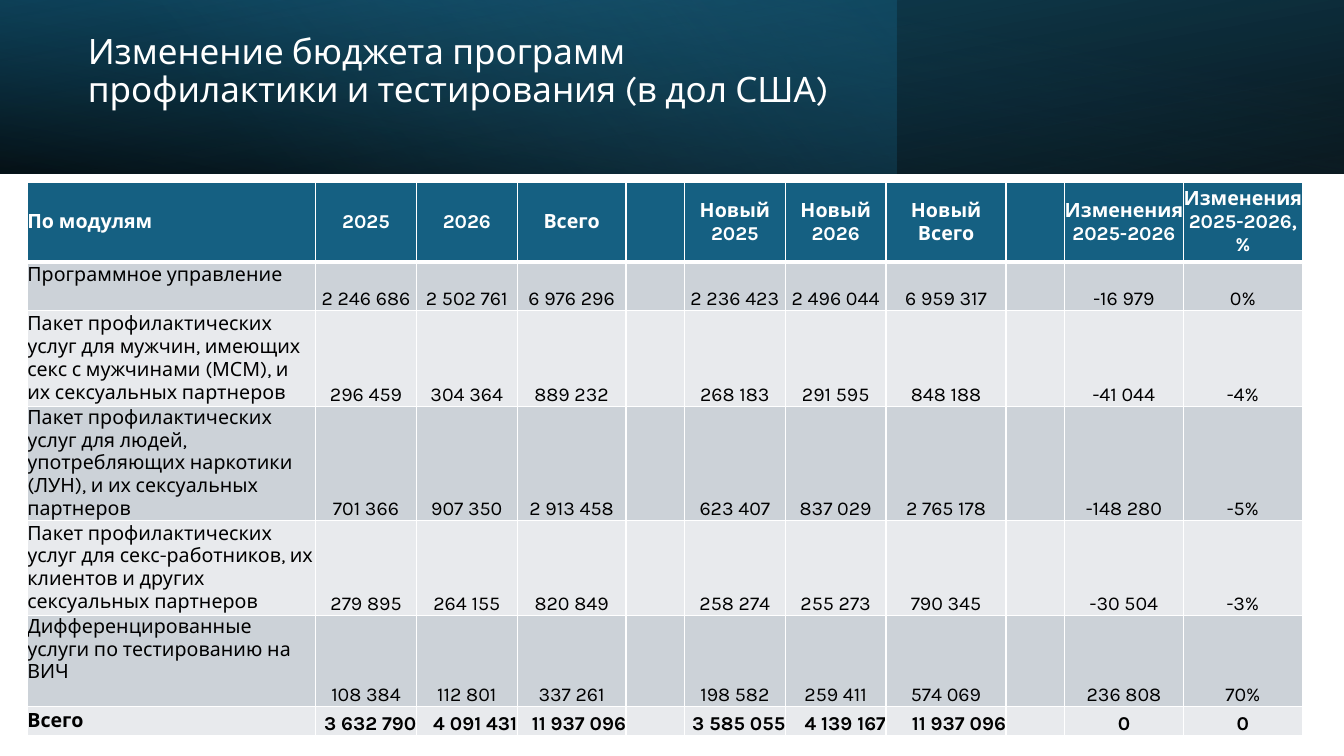
"""Build the slide on budget changes in prevention and testing programmes."""
from dataclasses import dataclass
from typing import NamedTuple

from lxml import etree
from pptx import Presentation
from pptx.dml.color import RGBColor
from pptx.enum.shapes import MSO_SHAPE
from pptx.enum.text import MSO_ANCHOR, MSO_AUTO_SIZE, PP_ALIGN
from pptx.oxml.ns import qn
from pptx.slide import Slide
from pptx.table import Table, _Cell
from pptx.text.text import _Paragraph
from pptx.util import Inches, Pt

RECT = MSO_SHAPE.RECTANGLE
MIDDLE, BOTTOM = MSO_ANCHOR.MIDDLE, MSO_ANCHOR.BOTTOM
LEFT, CENTER, RIGHT = PP_ALIGN.LEFT, PP_ALIGN.CENTER, PP_ALIGN.RIGHT
NO_FIT = MSO_AUTO_SIZE.NONE
WIDE, HIGH = Inches(13.33), Inches(7.5)


@dataclass(frozen=True)
class Theme:
    font: str = "Karla"
    title: int = 25
    body: int = 14
    white: str = "FFFFFF"
    black: str = "000000"
    blue: str = "156082"
    deep: str = "104862"
    sky: str = "46B1E1"
    dark: str = "CCD2D8"
    light: str = "E8EAED"


class Box(NamedTuple):
    """Left, top, width and height in percent of the slide."""
    x: float
    y: float
    w: float
    h: float


class Stop(NamedTuple):
    place: int
    color: str
    alpha: int


class Band(NamedTuple):
    width: float
    angle: int
    stops: tuple[Stop, ...]
    flip: bool = False
    turn: int = 0


class Row(NamedTuple):
    height: float
    name: str
    old: tuple[str, ...]
    new: tuple[str, ...]
    change: tuple[str, ...]
    foot: float = 0


THEME = Theme()
BAND_H = 22.93
TITLE = "Изменение бюджета программ профилактики и тестирования (в дол США)"
TITLE_BOX = Box(5.78, 3.6, 57.91, 16.93)
GRID_BOX = Box(2.03, 24.13, 94.89, 70.4)
YEAR, GAP, DIFF = 7.5, 4.35, 8.85
COLS = (21.46, YEAR, YEAR, 8.1, GAP, YEAR, YEAR, 8.93, GAP, DIFF, DIFF)

BANDS = (
    Band(100, 100, (Stop(0, THEME.black, 96), Stop(100, THEME.deep, 100)), True, 180),
    Band(66.69, 140, (Stop(0, THEME.blue, 41), Stop(74, THEME.sky, 0))),
    Band(100, 260, (Stop(0, THEME.black, 63), Stop(78, THEME.blue, 15)), True),
)

ROWS = (
    Row(10.53, "По модулям", ("2025", "2026", "Всего"),
        ("Новый 2025", "Новый 2026", "Новый\nВсего"),
        ("Изменения 2025-2026", "Изменения 2025-2026, %")),
    Row(6.4, "Программное управление", ("2 246 686", "2 502 761", "6 976 296"),
        ("2 236 423", "2 496 044", "6 959 317"), ("-16 979", "0%"), 3),
    Row(12.67, "Пакет профилактических услуг для мужчин, имеющих секс с мужчинами "
        "(МСМ), и их сексуальных партнеров", ("296 459", "304 364", "889 232"),
        ("268 183", "291 595", "848 188"), ("-41 044", "-4%")),
    Row(14.53, "Пакет профилактических услуг для людей, употребляющих наркотики "
        "(ЛУН), и их сексуальных партнеров", ("701 366", "907 350", "2 913 458"),
        ("623 407", "837 029", "2 765 178"), ("-148 280", "-5%")),
    Row(12.53, "Пакет профилактических услуг для секс-работников, их клиентов и "
        "других сексуальных партнеров", ("279 895", "264 155", "820 849"),
        ("258 274", "255 273", "790 345"), ("-30 504", "-3%")),
    Row(9.87, "Дифференцированные услуги по тестированию на ВИЧ",
        ("108 384", "112 801", "337 261"),
        ("198 582", "259 411", "574 069"), ("236 808", "70%"), 3),
    Row(3.87, "Всего", ("3 632 790", "4 091 431", "11 937 096"),
        ("3 585 055", "4 139 167", "11 937 096"), ("0", "0")),
)


def across(share: float) -> int:
    return round(WIDE * share / 100)


def down(share: float) -> int:
    return round(HIGH * share / 100)


def place(box: Box) -> tuple[int, int, int, int]:
    return across(box.x), down(box.y), across(box.w), down(box.h)


def add_run(para: _Paragraph, text: str, size: int, color: str, bold: bool = False) -> None:
    run = para.add_run()
    run.text = text
    run.font.name, run.font.size, run.font.bold = THEME.font, Pt(size), bold
    run.font.color.rgb = RGBColor.from_string(color)


def add_color(node: etree._Element, color: str, alpha: int = 100) -> None:
    tint = etree.SubElement(node, qn("a:srgbClr"), val=color)
    if alpha < 100:
        etree.SubElement(tint, qn("a:alpha"), val=str(alpha * 1000))


def draw_band(slide: Slide, band: Band) -> None:
    shape = slide.shapes.add_shape(RECT, *place(Box(0, 0, band.width, BAND_H)))
    shape.shadow.inherit = False
    shape.line.fill.background()
    shape.fill.background()
    shape.rotation = band.turn
    props = shape._element.spPr
    if band.flip:
        props.find(qn("a:xfrm")).set("flipH", "1")
    grad = etree.Element(qn("a:gradFill"), rotWithShape="1")
    stops = etree.SubElement(grad, qn("a:gsLst"))
    for stop in band.stops:
        node = etree.SubElement(stops, qn("a:gs"), pos=str(stop.place * 1000))
        add_color(node, stop.color, stop.alpha)
    etree.SubElement(grad, qn("a:lin"), ang=str(band.angle * 60000), scaled="0")
    props.replace(props.find(qn("a:noFill")), grad)


def draw_title(slide: Slide) -> None:
    title = slide.shapes.title
    title.left, title.top, title.width, title.height = place(TITLE_BOX)
    frame = title.text_frame
    frame.word_wrap, frame.auto_size = True, NO_FIT
    frame.vertical_anchor, frame.margin_bottom = MIDDLE, down(5.73)
    para = frame.paragraphs[0]
    para.alignment, para.line_spacing = LEFT, 0.9
    add_run(para, TITLE, THEME.title, THEME.white)
    slide.shapes._spTree.append(title._element)


def set_edges(cell: _Cell, base: int) -> None:
    props = cell._tc.get_or_add_tcPr()
    for spot, (side, width) in enumerate((("L", 1), ("R", 1), ("T", 1), ("B", base))):
        line = etree.Element(qn(f"a:ln{side}"), w=str(Pt(width)))
        add_color(etree.SubElement(line, qn("a:solidFill")), THEME.white)
        props.insert(spot, line)


def fill_cell(cell: _Cell, text: str, row: int, col: int) -> None:
    head, total = row == 0, row == len(ROWS) - 1
    back = THEME.blue if head else THEME.dark if row % 2 else THEME.light
    cell.fill.solid()
    cell.fill.fore_color.rgb = RGBColor.from_string(back)
    set_edges(cell, 3 if head else 1)
    cell.margin_left = cell.margin_right = cell.margin_top = 0
    cell.margin_bottom = 0 if col else down(ROWS[row].foot)
    cell.vertical_anchor = MIDDLE if head or col == 0 else BOTTOM
    frame = cell.text_frame
    for spot, part in enumerate(text.split("\n")):
        para = frame.add_paragraph() if spot else frame.paragraphs[0]
        para.alignment = LEFT if col == 0 else RIGHT if total and col < 9 else CENTER
        if part:
            add_run(para, part, THEME.body, THEME.white if head else THEME.black, head or total)
        else:
            etree.SubElement(para._p, qn("a:endParaRPr"), sz=str(THEME.body * 100))


def draw_table(slide: Slide) -> None:
    table: Table = slide.shapes.add_table(len(ROWS), len(COLS), *place(GRID_BOX)).table
    for col, share in zip(table.columns, COLS):
        col.width = across(share)
    for spot, row in enumerate(ROWS):
        table.rows[spot].height = down(row.height)
        texts = (row.name, *row.old, "", *row.new, "", *row.change)
        for col, text in enumerate(texts):
            fill_cell(table.cell(spot, col), text, spot, col)


def main() -> None:
    deck = Presentation()
    deck.slide_width, deck.slide_height = WIDE, HIGH
    slide = deck.slides.add_slide(deck.slide_layouts[5])
    for band in BANDS:
        draw_band(slide, band)
    draw_title(slide)
    draw_table(slide)
    deck.save("out.pptx")


if __name__ == "__main__":
    main()
